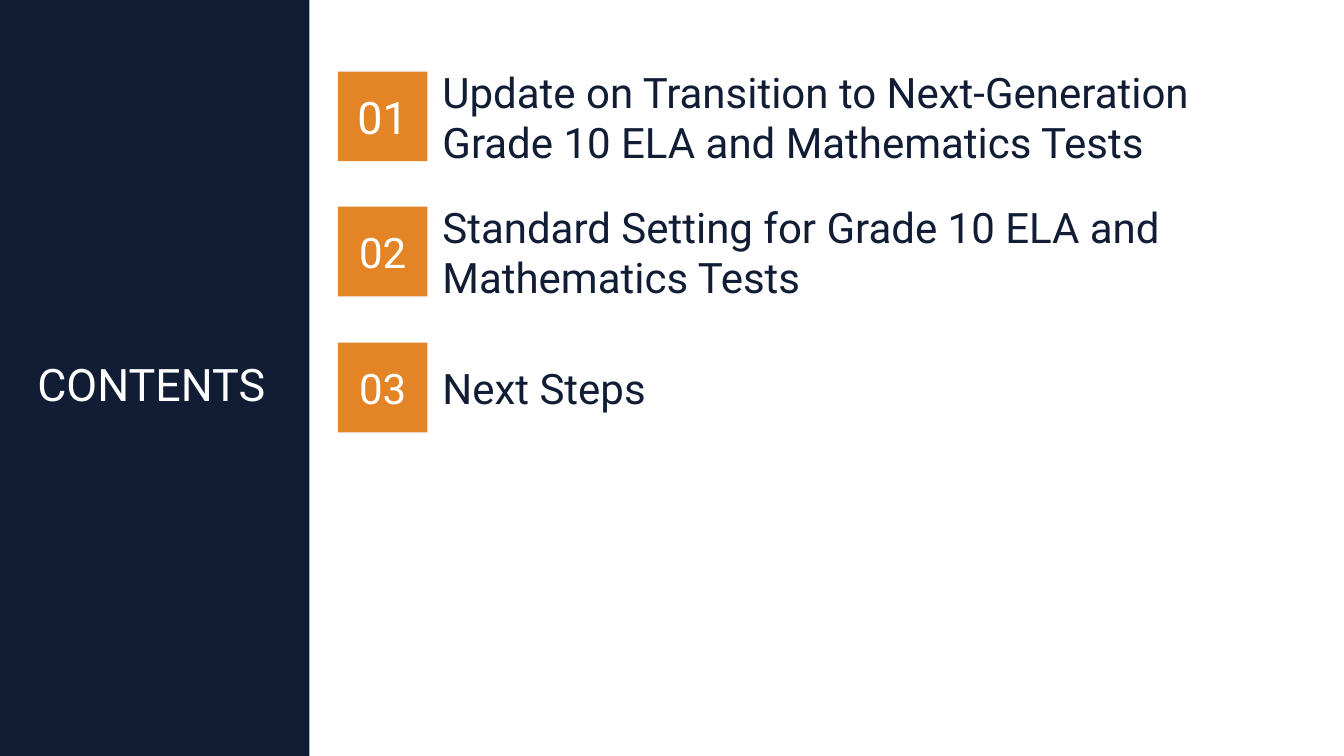
from dataclasses import dataclass

from pptx import Presentation
from pptx.dml.color import RGBColor
from pptx.enum.shapes import MSO_SHAPE
from pptx.enum.text import MSO_ANCHOR, MSO_AUTO_SIZE, PP_ALIGN
from pptx.util import Emu, Pt


@dataclass(frozen=True)
class Theme:
    """Colours, font and type sizes of the slide."""

    navy: RGBColor = RGBColor(0x10, 0x1D, 0x35)
    orange: RGBColor = RGBColor(0xE3, 0x85, 0x26)
    white: RGBColor = RGBColor(0xFF, 0xFF, 0xFF)
    font: str = "Roboto"
    large: int = 32
    regular: int = 30


THEME = Theme()
EMU_PER_PX = 9144
SLIDE_WIDTH, SLIDE_HEIGHT = 1333, 750
FIRST_TOP, THREE_ROWS_STEP, BADGE_SIZE = 71, 269, 89
AGENDA = [
    ("01", "Update on Transition to Next-Generation Grade 10 ELA and Mathematics Tests", THEME.large),
    ("02", "Standard Setting for Grade 10 ELA and Mathematics Tests", THEME.regular),
    ("03", "Next Steps", THEME.regular),
]


def px(*lengths):
    """Turn lengths in px into EMU."""
    return [Emu(length * EMU_PER_PX) for length in lengths]


def write_text(shape, text, *, size=THEME.regular, color=THEME.navy, align=PP_ALIGN.LEFT):
    """Write one vertically centred paragraph into a shape."""
    frame = shape.text_frame
    frame.word_wrap = True
    frame.auto_size = MSO_AUTO_SIZE.NONE
    frame.vertical_anchor = MSO_ANCHOR.MIDDLE
    paragraph = frame.paragraphs[0]
    paragraph.alignment = align
    run = paragraph.add_run()
    run.text = text
    run.font.name = THEME.font
    run.font.size = Pt(size)
    run.font.color.rgb = color


def add_block(slide, box, color):
    """Add a plain filled rectangle."""
    shape = slide.shapes.add_shape(MSO_SHAPE.RECTANGLE, *px(*box))
    shape.shadow.inherit = False
    shape.fill.solid()
    shape.fill.fore_color.rgb = color
    shape.line.fill.background()
    return shape


def add_agenda_item(slide, top, number, label, number_size):
    """Add a numbered badge with its label."""
    badge = add_block(slide, (335, top, BADGE_SIZE, BADGE_SIZE), THEME.orange)
    write_text(badge, number, size=number_size, color=THEME.white, align=PP_ALIGN.CENTER)
    write_text(slide.shapes.add_textbox(*px(429, top, 873, BADGE_SIZE)), label)


def place_title(slide, text):
    """Place the title in front of the sidebar."""
    title = slide.shapes.title
    title.left, title.top, title.width, title.height = px(27, 308, 1150, 145)
    write_text(title, text, size=THEME.large, color=THEME.white)
    title.element.getparent().append(title.element)


def main():
    """Build and save the contents slide."""
    presentation = Presentation()
    presentation.slide_width, presentation.slide_height = px(SLIDE_WIDTH, SLIDE_HEIGHT)
    slide = presentation.slides.add_slide(presentation.slide_layouts[5])
    add_block(slide, (0, 0, 307, SLIDE_HEIGHT), THEME.navy)
    for row, (number, label, number_size) in enumerate(AGENDA):
        top = FIRST_TOP + row * THREE_ROWS_STEP // 2
        add_agenda_item(slide, top, number, label, number_size)
    place_title(slide, "CONTENTS")
    presentation.save("out.pptx")


if __name__ == "__main__":
    main()
